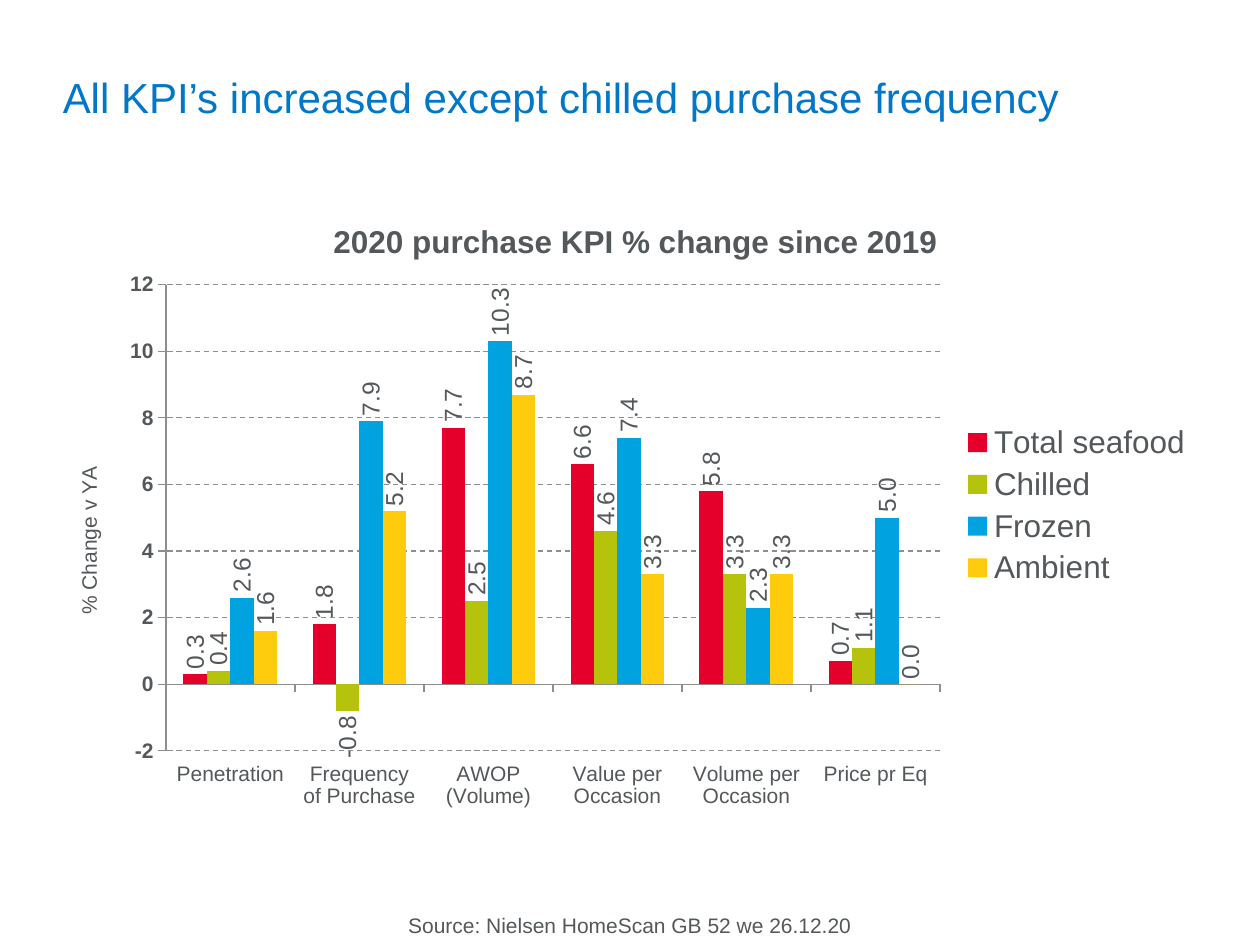
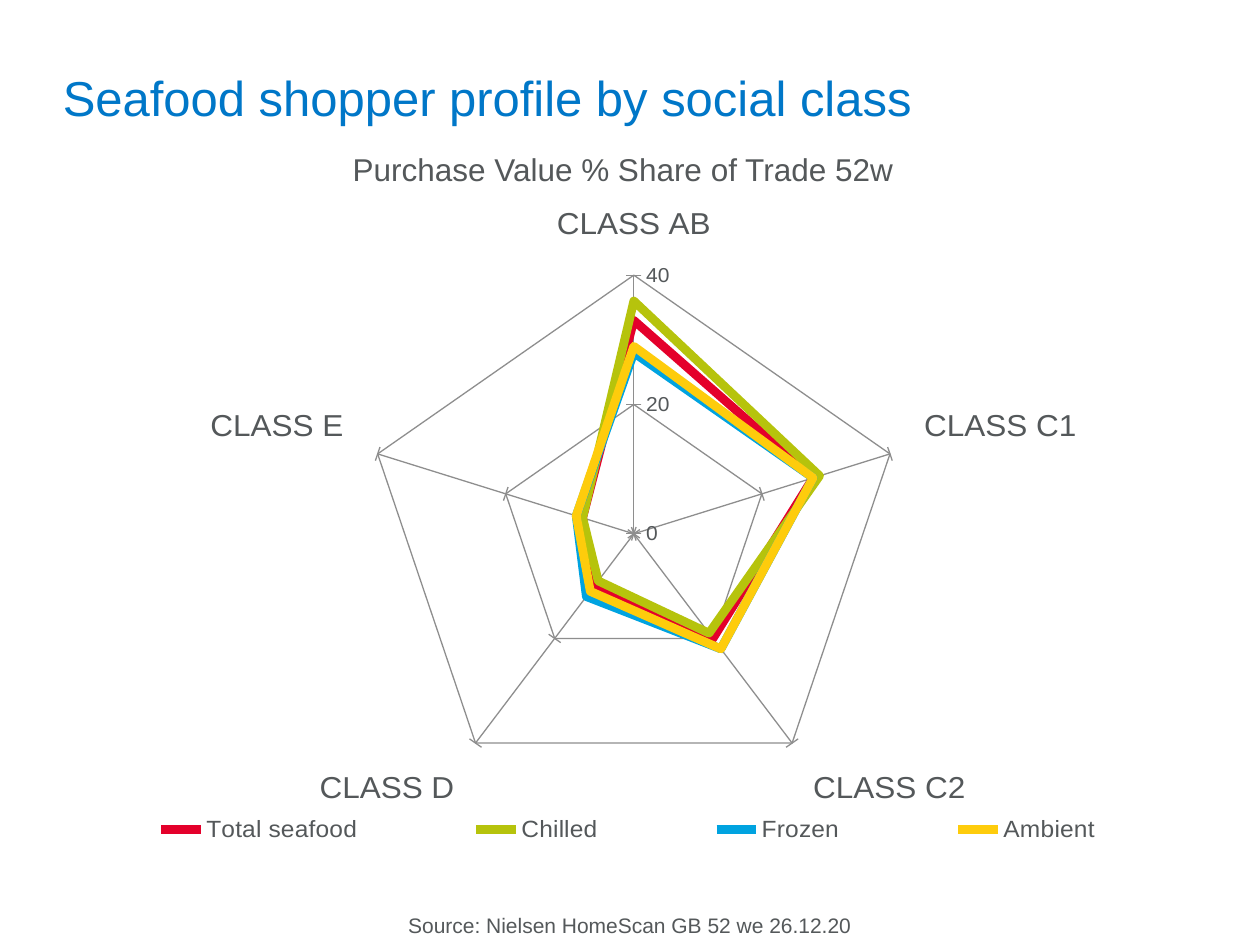
from dataclasses import dataclass

from lxml import etree
from pptx import Presentation
from pptx.chart.data import CategoryChartData
from pptx.dml.color import RGBColor
from pptx.enum.chart import XL_CHART_TYPE as ChartType
from pptx.enum.chart import XL_LABEL_POSITION as LabelPos
from pptx.enum.chart import XL_LEGEND_POSITION as LegendPos
from pptx.enum.chart import XL_TICK_LABEL_POSITION as TickLabelPos
from pptx.enum.chart import XL_TICK_MARK as TickMark
from pptx.enum.dml import MSO_LINE_DASH_STYLE as Dash
from pptx.enum.text import MSO_ANCHOR as Anchor
from pptx.enum.text import PP_ALIGN as Align
from pptx.oxml.ns import qn
from pptx.util import Inches, Pt

BLUE = RGBColor(0x00, 0x77, 0xC8)
GREY = RGBColor(0x54, 0x58, 0x5A)
AXIS_GREY = RGBColor(0x8E, 0x8E, 0x8E)
FONT = "Arial"
SOURCE = "Source: Nielsen HomeScan GB 52 we 26.12.20"
SECTOR_COLORS = {
    "Total seafood": RGBColor(0xE4, 0x00, 0x2B),
    "Chilled": RGBColor(0xB6, 0xC3, 0x0C),
    "Frozen": RGBColor(0x00, 0xA3, 0xE0),
    "Ambient": RGBColor(0xFE, 0xCC, 0x0C),
}


@dataclass
class Label:
    text: str
    left: float
    top: float
    width: float
    height: float
    size: int
    color: RGBColor = GREY
    align: Align = Align.LEFT
    anchor: Anchor = Anchor.TOP
    wrap: bool = True


@dataclass
class ChartBox:
    kind: ChartType
    top: float
    height: float
    categories: list[str]
    values: list[list[float]]  # one row per sector
    legend: LegendPos
    legend_size: int


KPI = ChartBox(
    ChartType.COLUMN_CLUSTERED, 1.51, 5,
    ["Penetration", "Frequency of Purchase", "AWOP (Volume)",
     "Value per Occasion", "Volume per Occasion", "Price pr Eq"],
    [[0.3, 1.8, 7.7, 6.6, 5.8, 0.7],
     [0.4, -0.8, 2.5, 4.6, 3.3, 1.1],
     [2.6, 7.9, 10.3, 7.4, 2.3, 5],
     [1.6, 5.2, 8.7, 3.3, 3.3, 0]],
    LegendPos.RIGHT, 18)
PROFILE = ChartBox(
    ChartType.RADAR, 1.64, 5.09,
    [f"CLASS {c}" for c in ("AB", "C1", "C2", "D", "E")],
    [[33, 28, 20, 10, 8],
     [36, 29, 19, 9, 8],
     [28, 28, 22, 12, 9],
     [29, 28, 22, 11, 9]],
    LegendPos.BOTTOM, 14)


def style_font(font, size: int, color: RGBColor = GREY, bold: bool = False) -> None:
    font.name, font.size, font.bold = FONT, Pt(size), bold
    font.color.rgb = color


def add_label(slide, label: Label) -> None:
    sp = slide.shapes.add_textbox(Inches(label.left), Inches(label.top),
                                  Inches(label.width), Inches(label.height))
    tf = sp.text_frame
    tf.word_wrap, tf.vertical_anchor = label.wrap, label.anchor
    p = tf.paragraphs[0]
    p.text, p.alignment = label.text, label.align
    style_font(p.font, label.size, label.color)


def add_slide(prs, title: str, title_size: int):
    """Blank slide with the shared title and source line."""
    slide = prs.slides.add_slide(prs.slide_layouts[6])
    add_label(slide, Label(title, 0.4, 0.3, 9.17, 0.94, title_size, BLUE,
                           anchor=Anchor.MIDDLE))
    add_label(slide, Label(SOURCE, 0, 7.19, 10, 0.3, 12, align=Align.CENTER))
    return slide


def set_layout(parent, index: int, inner: bool = False, **fractions: float) -> None:
    """Place a chart part by fractions of the chart's size."""
    for old in parent.findall(qn("c:layout")):
        parent.remove(old)
    layout = etree.Element(qn("c:layout"))
    manual = etree.SubElement(layout, qn("c:manualLayout"))
    settings = {"layoutTarget": "inner"} if inner else {}
    settings |= {"xMode": "edge", "yMode": "edge"} | fractions
    for tag, value in settings.items():
        etree.SubElement(manual, qn(f"c:{tag}")).set("val", str(value))
    parent.insert(index, layout)


def turn_upright(element) -> None:
    """Make the text of a chart part read upwards."""
    for body in element.iter(qn("a:bodyPr")):
        body.set("rot", "-5400000")
        body.set("vert", "horz")


def style_line(line, width: float = 0.75, color: RGBColor = AXIS_GREY) -> None:
    line.color.rgb = color
    line.width = Pt(width)


def add_chart(slide, box: ChartBox):
    data = CategoryChartData()
    data.categories = box.categories
    for name, values in zip(SECTOR_COLORS, box.values):
        data.add_series(name, values)
    chart = slide.shapes.add_chart(box.kind, Inches(0.4), Inches(box.top),
                                   Inches(9.17), Inches(box.height), data).chart
    style_font(chart.font, 18)
    chart.has_title = False
    chart.plots[0].vary_by_categories = False
    chart.has_legend = True
    chart.legend.position = box.legend
    chart.legend.include_in_layout = False
    style_font(chart.legend.font, box.legend_size)
    for axis in (chart.category_axis, chart.value_axis):
        axis.major_tick_mark = TickMark.OUTSIDE
        axis.minor_tick_mark = TickMark.NONE
        axis.tick_labels.number_format = "General"
        axis.tick_labels.number_format_is_linked = False
        style_line(axis.format.line)
    return chart


def set_scale(axis, low: float, high: float, step: float) -> None:
    axis.minimum_scale, axis.maximum_scale, axis.major_unit = low, high, step
    axis.has_major_gridlines = True
    style_line(axis.major_gridlines.format.line)


def build_kpi_slide(prs) -> None:
    slide = add_slide(prs, "All KPI’s increased except chilled purchase frequency", 24)
    chart = add_chart(slide, KPI)
    set_layout(chart.plots[0]._element.getparent(), 0, inner=True,
               x=0.1, y=0.15, w=0.67, h=0.74)

    # Chart title
    chart.has_title = True
    p = chart.chart_title.text_frame.paragraphs[0]
    p.text = "2020 purchase KPI % change since 2019"
    style_font(p.font, 18, bold=True)
    chart.chart_title.include_in_layout = False
    set_layout(chart.chart_title._element, 1, x=0.24, y=0.04)

    # Axes
    categories, change = chart.category_axis, chart.value_axis
    categories.tick_label_position = TickLabelPos.LOW
    style_font(categories.tick_labels.font, 12)
    style_font(change.tick_labels.font, 12, bold=True)
    set_scale(change, -2, 12, 2)
    change.major_gridlines.format.line.dash_style = Dash.DASH
    p = change.axis_title.text_frame.paragraphs[0]
    p.text = "% Change v YA"
    style_font(p.font, 12)
    turn_upright(change.axis_title._element)

    # Columns and their upright values
    plot = chart.plots[0]
    plot.gap_width, plot.overlap = 150, 0
    for series, color in zip(plot.series, SECTOR_COLORS.values()):
        series.invert_if_negative = False
        series.format.fill.solid()
        series.format.fill.fore_color.rgb = color
        labels = series.data_labels
        labels.show_value = True
        labels.number_format, labels.number_format_is_linked = "#,##0.0", False
        labels.position = LabelPos.OUTSIDE_END
        style_font(labels.font, 14)
        turn_upright(labels._element)


def build_profile_slide(prs) -> None:
    slide = add_slide(prs, "Seafood shopper profile by social class", 28)
    chart = add_chart(slide, PROFILE)
    set_layout(chart.plots[0]._element.getparent(), 0, inner=True,
               x=0.27, y=0.07, w=0.47, h=0.84)
    set_layout(chart.legend._element, 1, x=0, y=0.94, w=1, h=0.06)

    # Axes
    share = chart.value_axis
    style_font(chart.category_axis.tick_labels.font, 18)
    style_font(share.tick_labels.font, 12)
    set_scale(share, 0, 40, 20)
    share.major_tick_mark = TickMark.CROSS

    # Sector outlines
    for series, color in zip(chart.plots[0].series, SECTOR_COLORS.values()):
        series.smooth = False
        style_line(series.format.line, 5, color)

    add_label(slide, Label("Purchase Value % Share of Trade 52w",
                           2.7, 1.14, 4.58, 0.4, 18, wrap=False))


def main() -> None:
    prs = Presentation()
    prs.slide_width, prs.slide_height = Inches(10), Inches(7.5)
    build_kpi_slide(prs)
    build_profile_slide(prs)
    prs.save("out.pptx")


if __name__ == "__main__":
    main()
